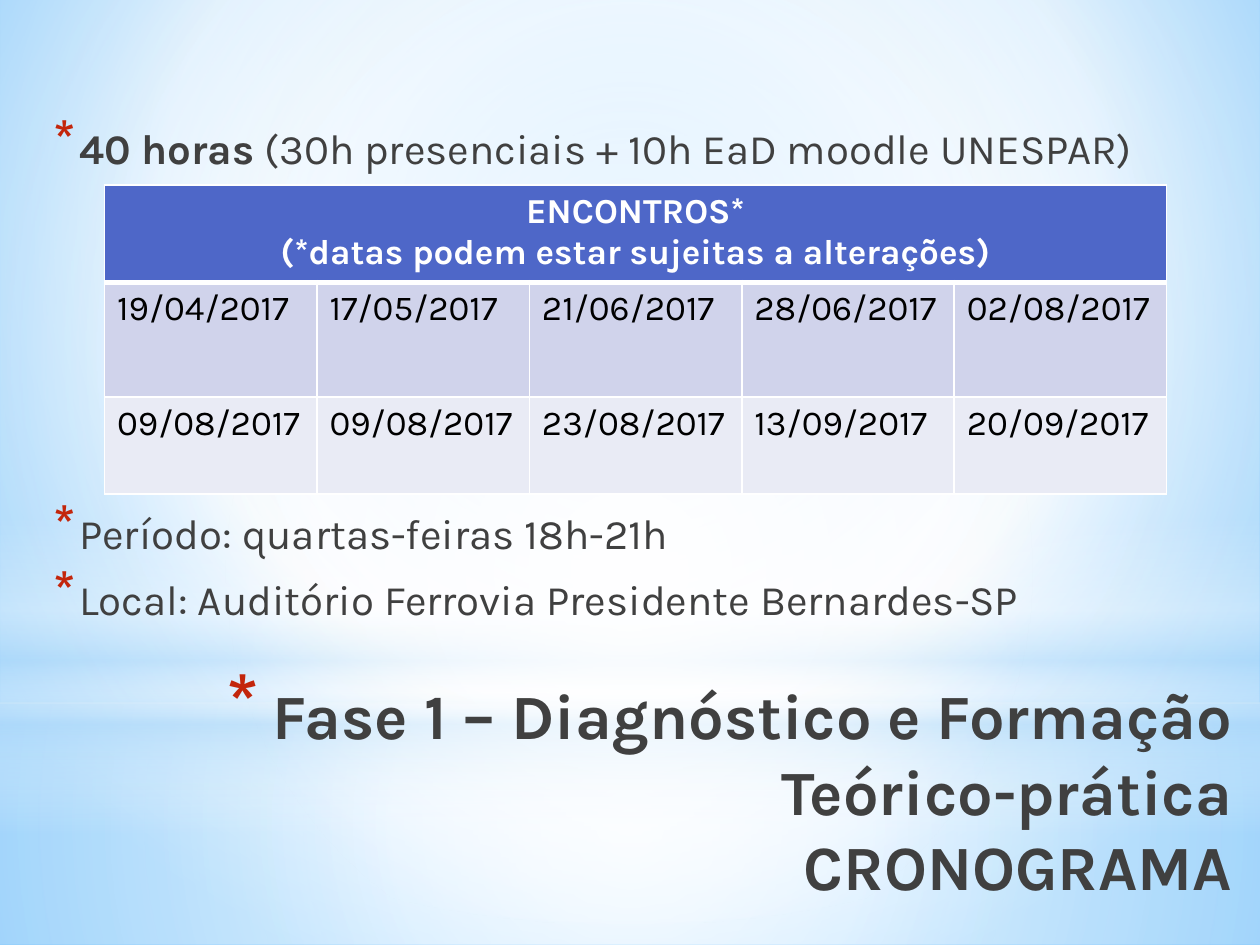
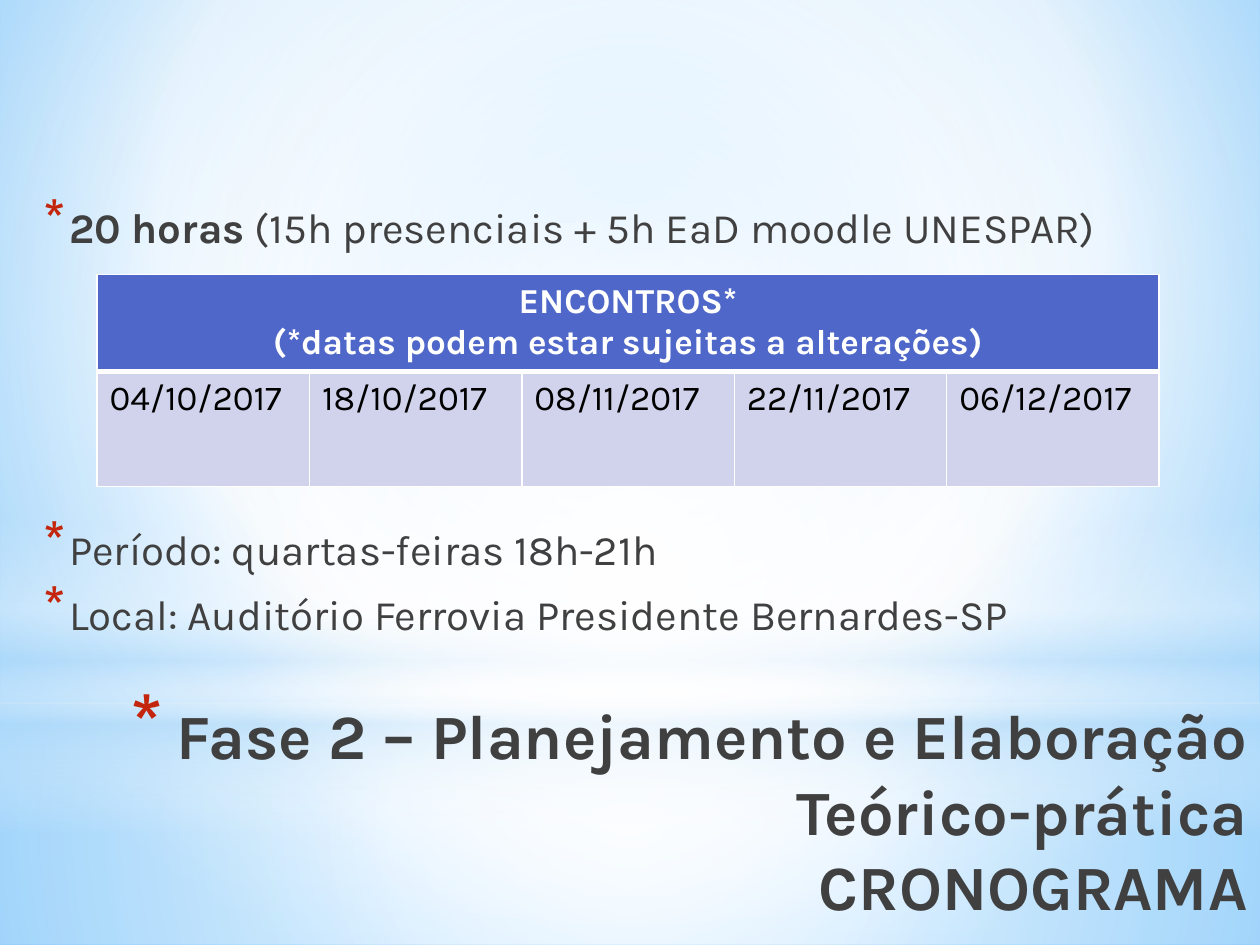
import pptx
import pptx.util
import pptx.dml.color
import pptx.enum.shapes
import pptx.enum.text
import pptx.oxml
import pptx.oxml.ns

# ---- Content ----
MEETINGS_HEADING = ["ENCONTROS*", "(*datas podem estar sujeitas a alterações)"]
DETAILS = [
    "Período: quartas-feiras 18h-21h",
    "Local: Auditório Ferrovia Presidente Bernardes-SP",
]
PHASES = [
    {
        "title": "Fase 1 – Diagnóstico e Formação Teórico-prática\vCRONOGRAMA",
        "title_box": (-0.12, 5.32, 10, 1.25),
        "hours": ("40 horas", " (30h presenciais + 10h EaD moodle UNESPAR)"),
        "body_box": (0.28, 0.92, 8.98, 4.55),
        "lines_for_table": 5,
        "dates": [
            ["19/04/2017", "17/05/2017", "21/06/2017", "28/06/2017", "02/08/2017"],
            ["09/08/2017", "09/08/2017", "23/08/2017", "13/09/2017", "20/09/2017"],
        ],
        "table_corner": (0.83, 1.47),
    },
    {
        "title": "Fase 2 – Planejamento e Elaboração Teórico-prática\vCRONOGRAMA",
        "title_box": (0.08, 5.48, 9.92, 1.25),
        "hours": ("20 horas", " (15h presenciais + 5h EaD moodle UNESPAR)"),
        "body_box": (0.2, 1.55, 9.37, 3.8),
        "lines_for_table": 4,
        "dates": [
            ["04/10/2017", "18/10/2017", "08/11/2017", "22/11/2017", "06/12/2017"],
        ],
        "table_corner": (0.77, 2.18),
    },
]

# ---- Shared look ----
WIDTH, HEIGHT = 10, 7.5
FONT = "Karla"
INK, ACCENT, WHITE, BLACK = "404040", "C3260C", "FFFFFF", "000000"
SKY, HEADER = "B4DCFA", "4E67C8"
ROW_FILLS = ["D0D3EB", "E9EBF5"]
TABLE_WIDTH, ROW_HEIGHTS = 8.43, [0.77, 0.91, 0.77]
LINE, BEFORE, AFTER = 28, 5.6, 3  # body rhythm in points
HORIZON = 5.58

# Gradient stops: position, colour, opacity (all but colour in percent)
BACKDROP = [(0, "9ED5FF", 100), (60, WHITE, 100), (100, "5BB9FF", 100)]
CENTRE = (50, 50, 50, 50)
RECT = pptx.enum.shapes.MSO_SHAPE.RECTANGLE
OVAL = pptx.enum.shapes.MSO_SHAPE.OVAL
# Preset, box, stops, focus (None means top to bottom)
BANDS = [
    (RECT, (0, HORIZON, WIDTH, HEIGHT - HORIZON),
     [(0, WHITE, 91), (37, WHITE, 76), (100, SKY, 79)], CENTRE),
    (RECT, (0, 0, WIDTH, HORIZON),
     [(0, WHITE, 89), (48, WHITE, 62), (100, SKY, 79)], CENTRE),
    (RECT, (0, 4.12, WIDTH, 2.5),
     [(0, WHITE, 0), (29, WHITE, 30), (45, SKY, 40),
      (55, WHITE, 26), (65, SKY, 60), (100, WHITE, 0)], None),
    (OVAL, (0, 1.75, WIDTH, HORIZON),
     [(0, WHITE, 100), (56, WHITE, 0)], CENTRE),
]


def color(value):
    return pptx.dml.color.RGBColor.from_string(value)


def inches(values):
    return [pptx.util.Inches(v) for v in values]


def xml(text):
    return pptx.oxml.parse_xml(text.replace(">", f" {pptx.oxml.ns.nsdecls('a')}>", 1)
                               if "/>" not in text.split(">")[0] + ">"
                               else text.replace("/>", f" {pptx.oxml.ns.nsdecls('a')}/>", 1))


def set_gradient(fill, element, stops, focus):
    fill.gradient()
    plain = element.find(".//" + pptx.oxml.ns.qn("a:gradFill"))
    marks = "".join(
        f'<a:gs pos="{pos * 1000}"><a:srgbClr val="{tone}">'
        f'<a:alpha val="{opacity * 1000}"/></a:srgbClr></a:gs>'
        for pos, tone, opacity in stops)
    if focus:
        left, top, right, bottom = (share * 1000 for share in focus)
        course = (f'<a:path path="circle"><a:fillToRect l="{left}" t="{top}" '
                  f'r="{right}" b="{bottom}"/></a:path>')
    else:
        course = '<a:lin ang="5400000" scaled="0"/>'
    plain.getparent().replace(plain, xml(
        f'<a:gradFill rotWithShape="1"><a:gsLst>{marks}</a:gsLst>{course}</a:gradFill>'))


def style_run(run, size, tone, bold):
    run.font.name = FONT
    run.font.size = pptx.util.Pt(size)
    run.font.bold = bold
    run.font.color.rgb = color(tone)


def add_star(paragraph, margin, hanging, percent):
    props = paragraph._p.get_or_add_pPr()
    props.set("marL", str(pptx.util.Inches(margin)))
    props.set("indent", str(-pptx.util.Inches(hanging)))
    for bullet in (f'<a:buClr><a:srgbClr val="{ACCENT}"/></a:buClr>',
                   f'<a:buSzPct val="{percent * 1000}"/>',
                   '<a:buChar char="*"/>'):
        props.append(xml(bullet))


def add_text_frame(slide, box):
    frame = slide.shapes.add_textbox(*inches(box)).text_frame
    frame.word_wrap = True
    return frame


def add_backdrop(slide):
    set_gradient(slide.background.fill, slide._element, BACKDROP, (20, 10, 20, 60))
    for preset, box, stops, focus in BANDS:
        band = slide.shapes.add_shape(preset, *inches(box))
        band.shadow.inherit = False
        band.line.fill.background()
        set_gradient(band.fill, band._element, stops, focus)


def add_title(slide, phase):
    title = add_text_frame(slide, phase["title_box"]).paragraphs[0]
    title.text = phase["title"]
    title.alignment = pptx.enum.text.PP_ALIGN.RIGHT
    add_star(title, 0.35, 0.35, 128)
    for run in title.runs:
        style_run(run, 36, INK, True)


def add_body(slide, phase):
    frame = add_text_frame(slide, phase["body_box"])
    table_gap = phase["lines_for_table"] * (LINE + BEFORE + AFTER)
    items = [(phase["hours"], 0), ((DETAILS[0],), BEFORE + table_gap), ((DETAILS[1],), BEFORE)]
    for index, (parts, before) in enumerate(items):
        item = frame.add_paragraph() if index else frame.paragraphs[0]
        if index:
            item.space_before = pptx.util.Pt(before)
        item.space_after = pptx.util.Pt(AFTER)
        add_star(item, 0.25, 0.2, 130)
        for part in parts:
            run = item.add_run()
            run.text = part
            style_run(run, 24, INK, part == phase["hours"][0])


def style_cell(cell, fill, top=1, bottom=1):
    cell.fill.solid()
    cell.fill.fore_color.rgb = color(fill)
    props = cell._tc.get_or_add_tcPr()
    for place, (side, points) in enumerate(
            [("L", 1), ("R", 1), ("T", top), ("B", bottom)]):
        props.insert(place, xml(
            f'<a:ln{side} w="{points * 12700}"><a:solidFill>'
            f'<a:srgbClr val="{WHITE}"/></a:solidFill></a:ln{side}>'))


def add_meetings(slide, phase):
    dates = phase["dates"]
    heights = ROW_HEIGHTS[:len(dates) + 1]
    columns = len(dates[0])
    table = slide.shapes.add_table(
        len(heights), columns,
        *inches((*phase["table_corner"], TABLE_WIDTH, sum(heights)))).table
    for row, height in zip(table.rows, heights):
        row.height = pptx.util.Inches(height)

    # Heading across all columns
    heading = table.cell(0, 0)
    heading.merge(table.cell(0, columns - 1))
    heading.text_frame.text = "\n".join(MEETINGS_HEADING)
    for paragraph in heading.text_frame.paragraphs:
        paragraph.alignment = pptx.enum.text.PP_ALIGN.CENTER
        style_run(paragraph.runs[0], 20, WHITE, True)
    for column in range(columns):
        style_cell(table.cell(0, column), HEADER, bottom=3)

    # Meeting dates
    for r, week in enumerate(dates):
        for c, date in enumerate(week):
            cell = table.cell(r + 1, c)
            cell.text_frame.text = date
            style_run(cell.text_frame.paragraphs[0].runs[0], 20, BLACK, False)
            style_cell(cell, ROW_FILLS[r], top=1 if r else 3)


def main():
    deck = pptx.Presentation()
    deck.slide_width, deck.slide_height = inches((WIDTH, HEIGHT))
    for phase in PHASES:
        slide = deck.slides.add_slide(deck.slide_layouts[6])
        add_backdrop(slide)
        add_title(slide, phase)
        add_body(slide, phase)
        add_meetings(slide, phase)
    deck.save("out.pptx")


if __name__ == "__main__":
    main()
